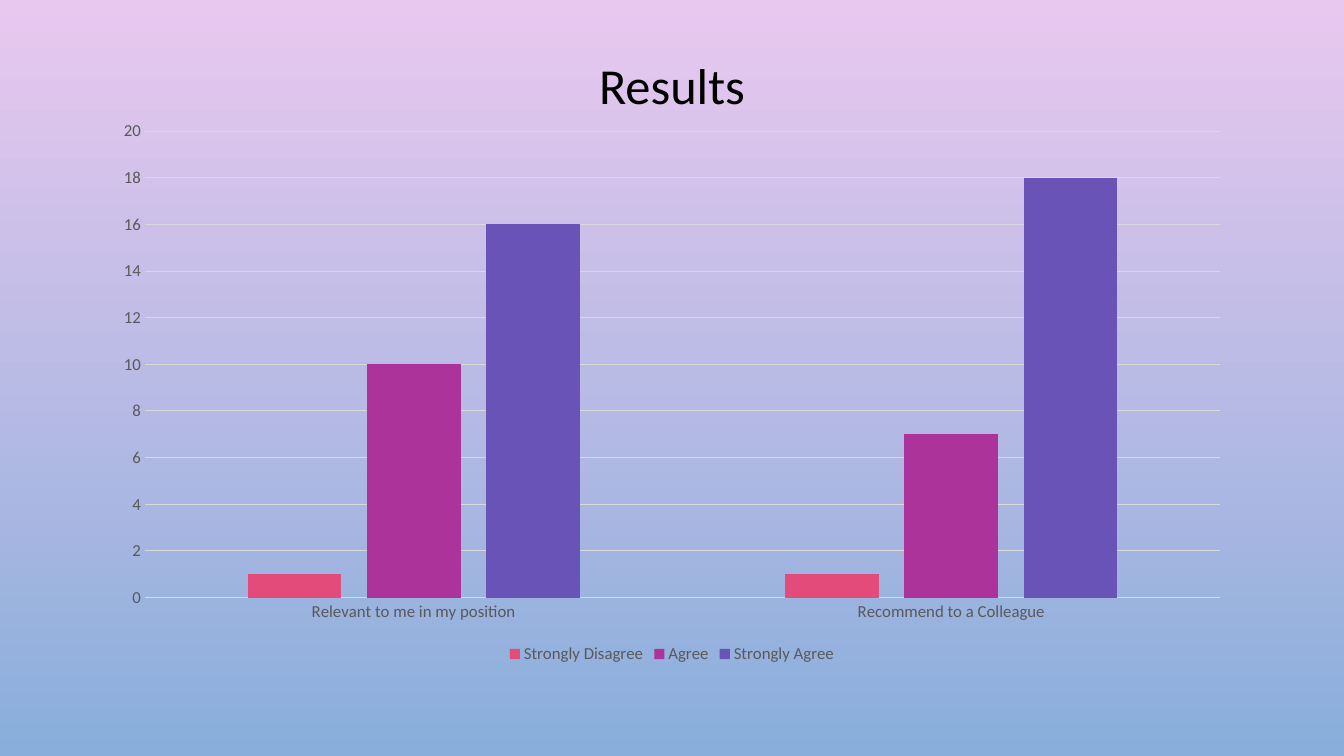
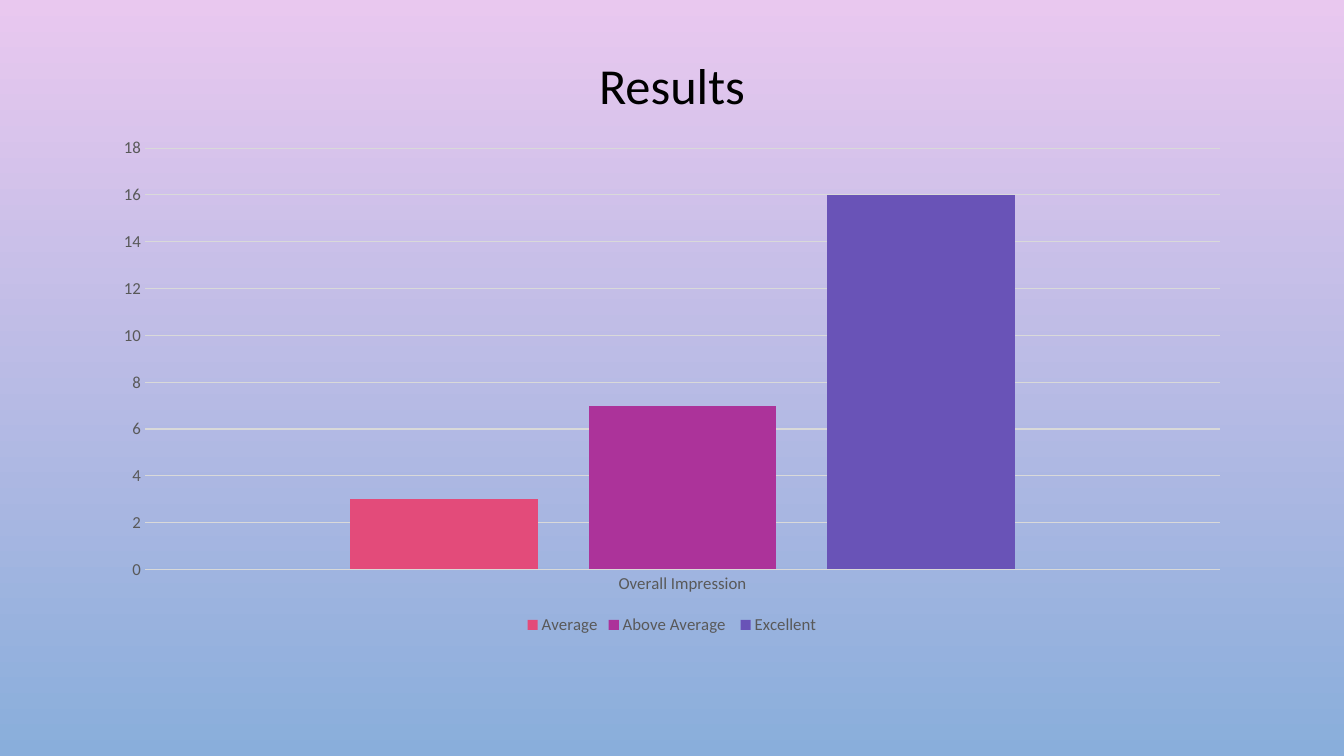
import pptx
import pptx.chart.data
import pptx.dml.color
import pptx.enum.chart
import pptx.enum.text
import pptx.util

EMU_PER_PX = 914400 / 100.8
SLIDE_WIDTH, SLIDE_HEIGHT = 1344, 756
MARGIN = 101
CONTENT_WIDTH = SLIDE_WIDTH - 2 * MARGIN
TITLE_HEIGHT = 176

FONT = "Calibri"
GRADIENT = ("E9C8EF", "89AEDB")
SERIES_COLORS = ("E34B7A", "AC339A", "6953B7")
BLACK = "000000"
LABEL_GREY = "595959"
LINE_GREY = "D9D9D9"


def px(length):
    return pptx.util.Emu(round(length * EMU_PER_PX))


def rgb(color):
    return pptx.dml.color.RGBColor.from_string(color)


def style_font(font, size, color):
    font.name = FONT
    font.size = pptx.util.Pt(size)
    font.color.rgb = rgb(color)


def style_line(line):
    line.color.rgb = rgb(LINE_GREY)
    line.width = pptx.util.Pt(0.75)


def style_template(prs, layout):
    """Set the shared background and the title's place and alignment."""
    fill = prs.slide_master.background.fill
    fill.gradient()
    fill.gradient_angle = 270
    for stop, color in zip(fill.gradient_stops, GRADIENT):
        stop.color.rgb = rgb(color)

    for placeholder in layout.placeholders:
        if placeholder.placeholder_format.idx == 0:
            placeholder.left, placeholder.top = px(MARGIN), px(0)
            placeholder.width, placeholder.height = px(CONTENT_WIDTH), px(TITLE_HEIGHT)
            placeholder.text_frame.vertical_anchor = pptx.enum.text.MSO_ANCHOR.MIDDLE


def add_title(slide, text):
    title = slide.shapes.title
    title.text_frame.text = text
    paragraph = title.text_frame.paragraphs[0]
    paragraph.alignment = pptx.enum.text.PP_ALIGN.CENTER
    paragraph.line_spacing = 0.9
    style_font(paragraph.runs[0].font, 36, BLACK)


def style_axes(chart):
    for axis in (chart.category_axis, chart.value_axis):
        axis.major_tick_mark = pptx.enum.chart.XL_TICK_MARK.NONE
        axis.minor_tick_mark = pptx.enum.chart.XL_TICK_MARK.NONE
        style_font(axis.tick_labels.font, 12, LABEL_GREY)
    style_line(chart.category_axis.format.line)
    chart.value_axis.format.line.fill.background()
    chart.value_axis.has_major_gridlines = True
    style_line(chart.value_axis.major_gridlines.format.line)


def add_column_chart(slide, top, height, categories, answers):
    """Draw one coloured column series per answer, with a legend below."""
    data = pptx.chart.data.CategoryChartData()
    data.categories = categories
    for answer, counts in answers.items():
        data.add_series(answer, counts)
    chart = slide.shapes.add_chart(
        pptx.enum.chart.XL_CHART_TYPE.COLUMN_CLUSTERED,
        px(MARGIN), px(top), px(CONTENT_WIDTH), px(height), data).chart
    chart.has_title = False
    style_font(chart.font, 10, BLACK)
    style_axes(chart)

    chart.has_legend = True
    chart.legend.position = pptx.enum.chart.XL_LEGEND_POSITION.BOTTOM
    chart.legend.include_in_layout = False
    style_font(chart.legend.font, 12, LABEL_GREY)

    plot = chart.plots[0]
    plot.gap_width = 219
    plot.overlap = -27
    plot.vary_by_categories = False
    for series, color in zip(plot.series, SERIES_COLORS):
        series.format.fill.solid()
        series.format.fill.fore_color.rgb = rgb(color)


def add_results_slide(prs, layout, top, height, categories, answers):
    slide = prs.slides.add_slide(layout)
    add_title(slide, "Results")
    add_column_chart(slide, top, height, categories, answers)


def main():
    prs = pptx.Presentation()
    prs.slide_width, prs.slide_height = px(SLIDE_WIDTH), px(SLIDE_HEIGHT)
    layout = prs.slide_layouts.get_by_name("Title Only")
    style_template(prs, layout)

    add_results_slide(
        prs, layout, 110, 558,
        ["Relevant to me in my position", "Recommend to a Colleague"],
        {"Strongly Disagree": (1, 1), "Agree": (10, 7), "Strongly Agree": (16, 18)})
    add_results_slide(
        prs, layout, 128, 511,
        ["Overall Impression"],
        {"Average": (3,), "Above Average ": (7,), "Excellent": (16,)})

    prs.save("out.pptx")


if __name__ == "__main__":
    main()
